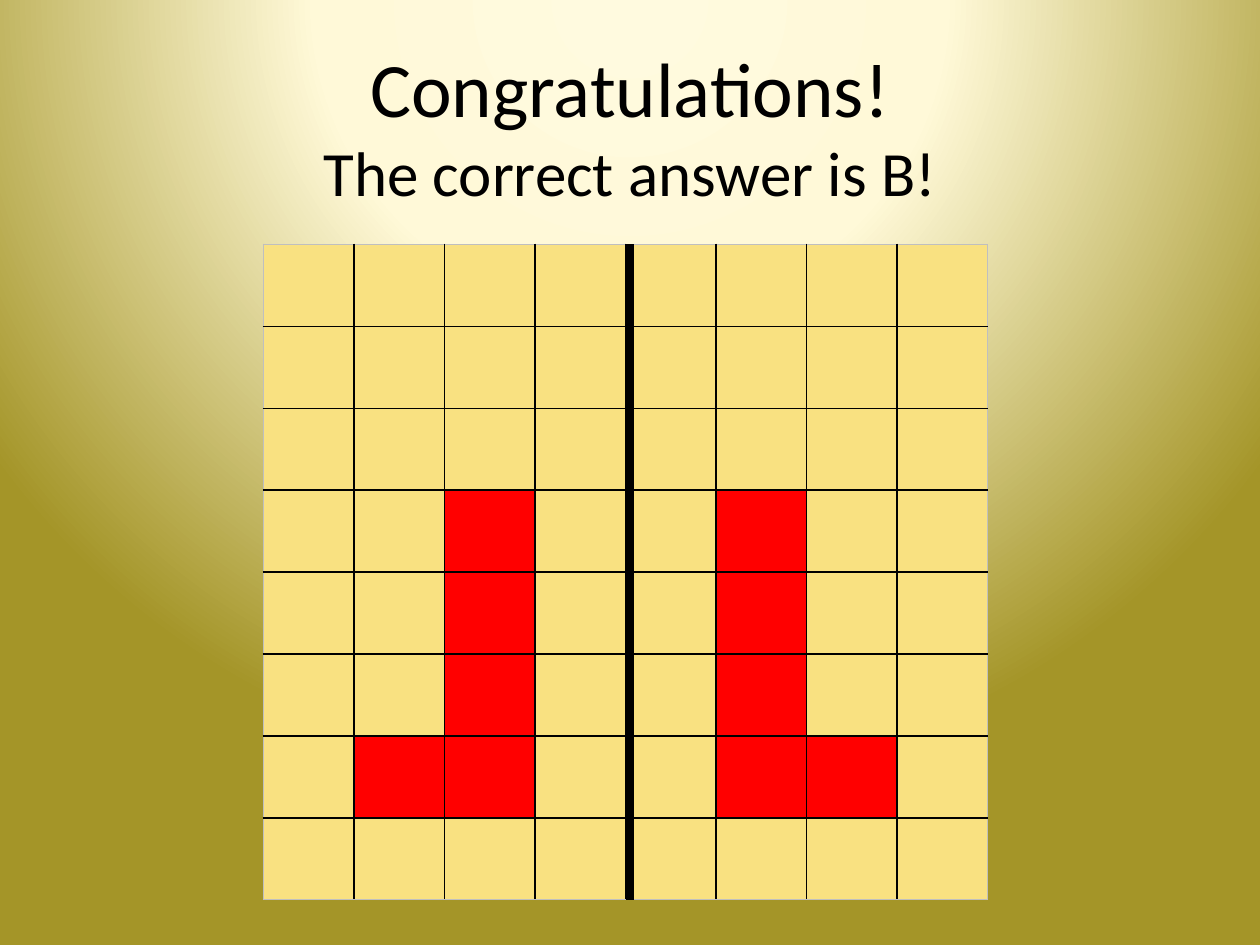
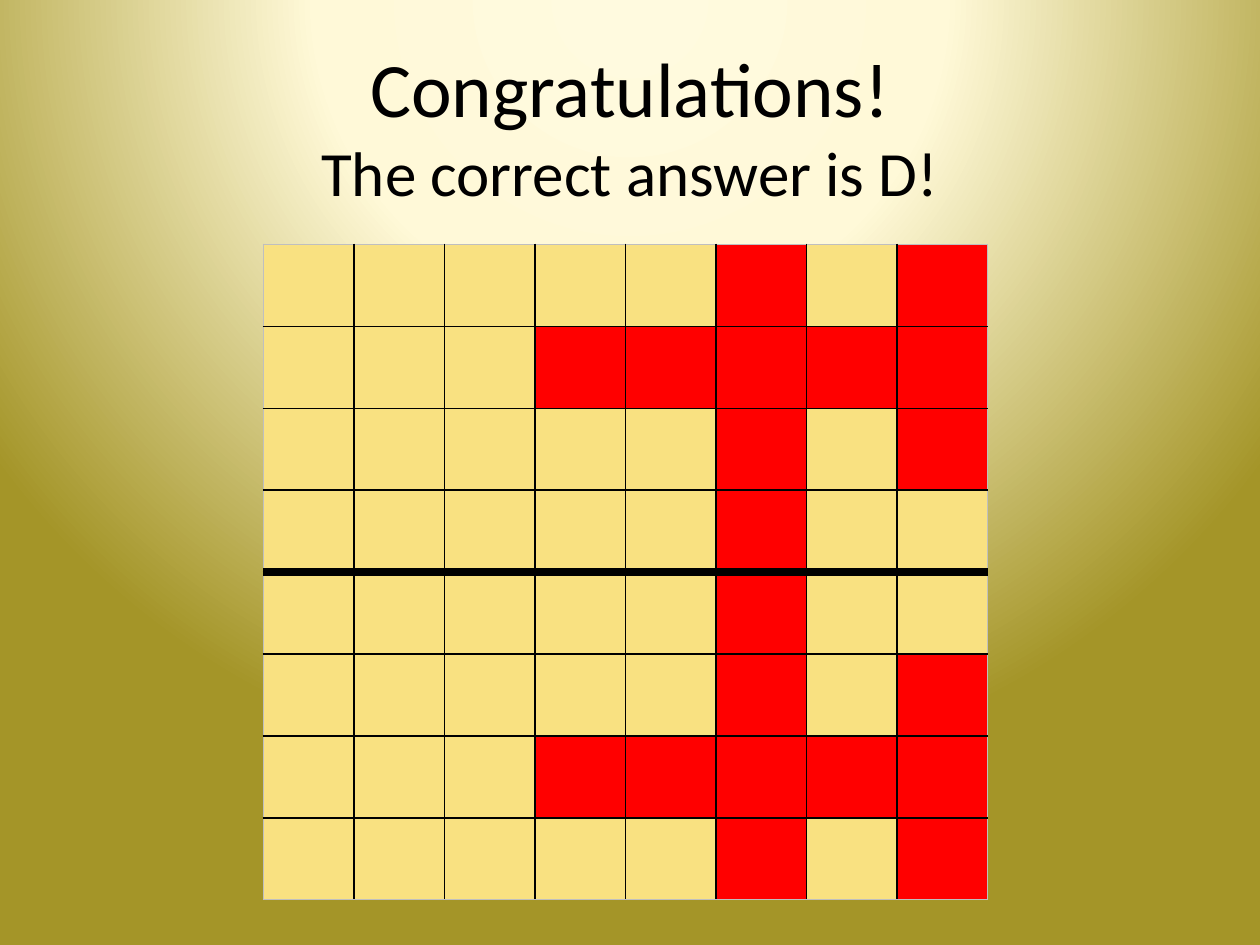
"""Build two answer slides, each showing a figure reflected in a mirror line on a grid."""
from pptx import Presentation
from pptx import util as u
from pptx.dml import color
from pptx.enum import shapes, text
from pptx.oxml import parse_xml
from pptx.oxml.ns import nsdecls, qn

BLACK, RED, SAND, GREY = "000000", "FF0000", "F9E181", "BFBFBF"
GRADIENT = [(0, "FFFADF"), (40, "FFF9D8"), (100, "A49528")]
SIZE = 8
LEFT, TOP, WIDTH, HEIGHT = 2.09, 1.94, 5.75, 5.2
RIGHT, BOTTOM = LEFT + WIDTH, TOP + HEIGHT


def rgb(value):
    return color.RGBColor.from_string(value)


def add_text(paragraph, words, size, font="Calibri", fill=BLACK):
    run = paragraph.add_run()
    run.text = words
    run.font.size = u.Pt(size)
    run.font.name = font
    run.font.color.rgb = rgb(fill)


left_half = ["....", "....", "....", "..#.", "..#.", "..#.", ".##.", "...."]
top_half = [".....#.#", "...#####", ".....#.#", ".....#.."]
middle = TOP + HEIGHT / 2
answers = [
    ("B", [row + row[::-1] for row in left_half], (5, TOP, 5, BOTTOM)),
    ("D", top_half + top_half[::-1], (LEFT, middle, RIGHT, middle)),
]

presentation = Presentation()
presentation.slide_width = u.Inches(10)
presentation.slide_height = u.Inches(7.5)

master = presentation.slide_master
master.background.fill.gradient()
old_gradient = master.element.find(".//" + qn("a:gradFill"))
stops = "".join(
    f'<a:gs pos="{position * 1000}"><a:srgbClr val="{value}"/></a:gs>'
    for position, value in GRADIENT
)
old_gradient.getparent().replace(old_gradient, parse_xml(
    f'<a:gradFill {nsdecls("a")} rotWithShape="1"><a:gsLst>{stops}</a:gsLst>'
    '<a:path path="circle"><a:fillToRect l="50000" t="-80000" r="50000" b="180000"/>'
    '</a:path></a:gradFill>'
))

for letter, pattern, mirror in answers:
    slide = presentation.slides.add_slide(presentation.slide_layouts[6])

    title = slide.shapes.add_textbox(
        u.Inches(0.5), u.Inches(0.05), u.Inches(9), u.Inches(1.88)
    ).text_frame
    title.word_wrap = True
    title.vertical_anchor = text.MSO_ANCHOR.MIDDLE
    paragraph = title.paragraphs[0]
    paragraph.alignment = text.PP_ALIGN.CENTER
    add_text(paragraph, "Congratulations!", 44)
    paragraph.add_line_break()
    add_text(paragraph, f"The correct answer is {letter}!", 36)

    grid = slide.shapes.add_table(
        SIZE, SIZE, u.Inches(LEFT), u.Inches(TOP), u.Inches(WIDTH), u.Inches(HEIGHT)
    ).table
    grid.first_row = False
    grid.horz_banding = False
    for row, marks in enumerate(pattern):
        for column, mark in enumerate(marks):
            cell = grid.cell(row, column)
            properties = cell._tc.get_or_add_tcPr()
            outer_edges = {
                "lnL": column == 0, "lnR": column == SIZE - 1,
                "lnT": row == 0, "lnB": row == SIZE - 1,
            }
            for edge, is_outer in outer_edges.items():
                properties.append(parse_xml(
                    f'<a:{edge} {nsdecls("a")} w="{u.Pt(1)}"><a:solidFill>'
                    f'<a:srgbClr val="{GREY if is_outer else BLACK}"/>'
                    f'</a:solidFill></a:{edge}>'
                ))
            cell.fill.solid()
            cell.fill.fore_color.rgb = rgb(RED if mark == "#" else SAND)

    mirror_line = slide.shapes.add_connector(
        shapes.MSO_CONNECTOR.STRAIGHT, *[u.Inches(value) for value in mirror]
    )
    mirror_line.line.color.rgb = rgb(BLACK)
    mirror_line.line.width = u.Pt(4.5)
    mirror_line._element.spPr.append(parse_xml(f'<a:effectLst {nsdecls("a")}/>'))

presentation.save("out.pptx")
